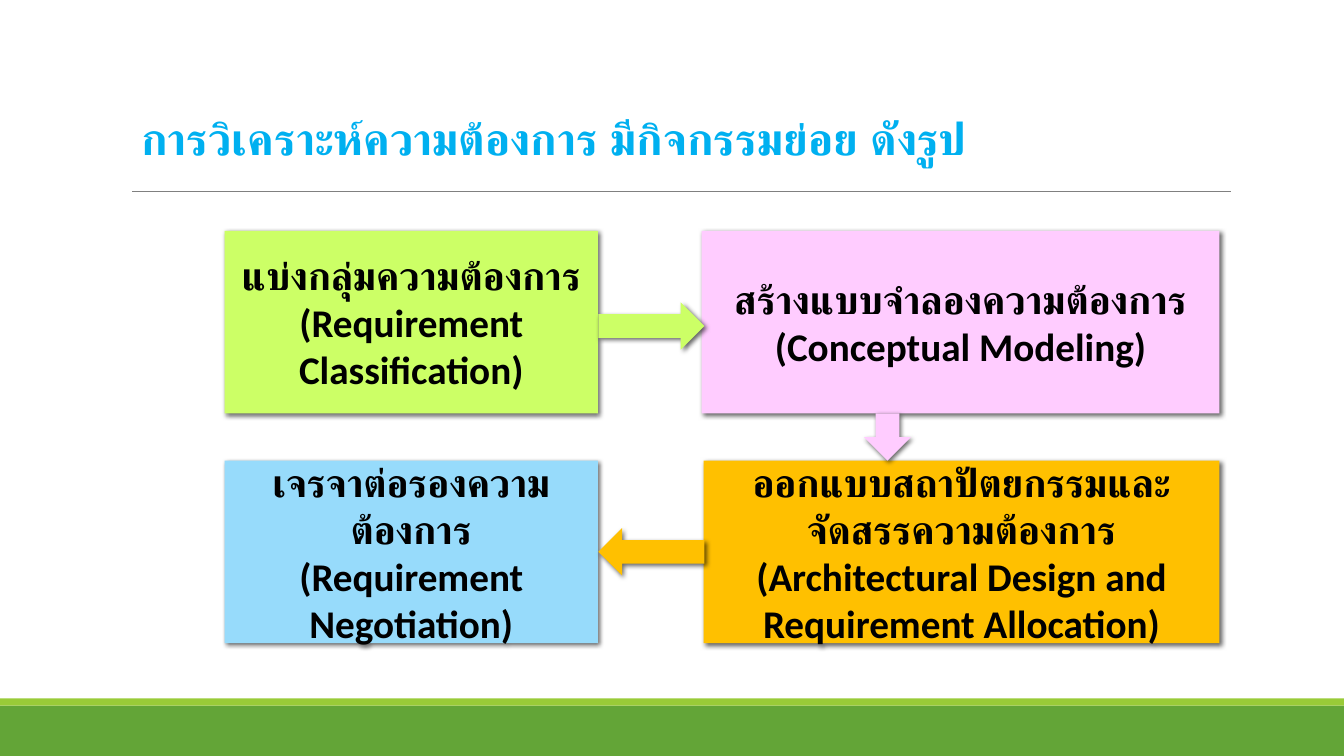
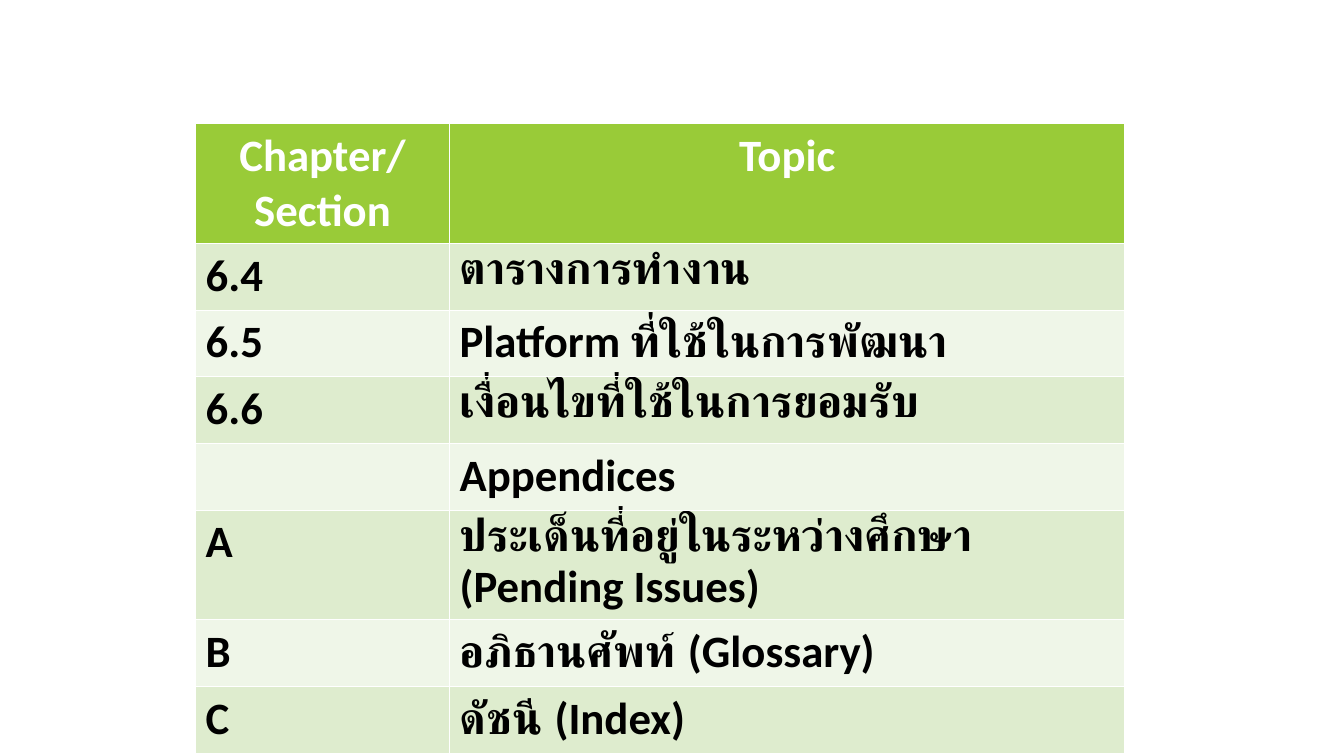
from dataclasses import dataclass

from lxml.etree import SubElement
from pptx import Presentation
from pptx.dml.color import RGBColor
from pptx.enum.shapes import MSO_CONNECTOR, MSO_SHAPE
from pptx.enum.text import MSO_ANCHOR, MSO_AUTO_SIZE, PP_ALIGN
from pptx.oxml.ns import qn
from pptx.shapes.autoshape import Shape
from pptx.slide import Slide
from pptx.text.text import TextFrame
from pptx.util import Cm, Pt

FONT = "Calibri"
BLACK, WHITE, GREY = "000000", "FFFFFF", "808080"
GREEN, LIME, TITLE_BLUE = "63A537", "99CB38", "00B0F0"
YELLOW_GREEN, PINK, ORANGE, SKY = "CCFF66", "FFCCFF", "FFC000", "97DBFB"
ROW_FILLS = ("EFF6E8", "DEECCE")

SLIDE_WIDTH, SLIDE_HEIGHT = 33.87, 19.05
TOP_ROW, BOTTOM_ROW, ACTIVITY_HEIGHT = 5.82, 11.61, 4.6
ARROW_LEFT, ARROW_LENGTH, ARROW_THICKNESS = 15.08, 2.67, 1.19


@dataclass(frozen=True)
class Activity:
    """A step of the analysis, with lengths in centimetres."""
    left: float
    top: float
    width: float
    color: str
    thai: str
    english: str


@dataclass(frozen=True)
class Arrow:
    """A block arrow between two activities, with lengths in centimetres."""
    left: float
    top: float
    length: float
    rotation: int
    color: str


ACTIVITIES = (
    Activity(5.66, TOP_ROW, 9.41, YELLOW_GREEN,
             "แบ่งกลุ่มความต้องการ", "(Requirement Classification)"),
    Activity(17.68, TOP_ROW, 13.05, PINK,
             "สร้างแบบจำลองความต้องการ", "(Conceptual Modeling)"),
    Activity(17.73, BOTTOM_ROW, 13, ORANGE,
             "ออกแบบสถาปัตยกรรมและจัดสรรความต้องการ",
             "(Architectural Design and Requirement Allocation)"),
    Activity(5.66, BOTTOM_ROW, 9.41, SKY,
             "เจรจาต่อรองความต้องการ", "(Requirement Negotiation)"),
)

ARROWS = (
    Arrow(ARROW_LEFT, 7.62, ARROW_LENGTH, 0, YELLOW_GREEN),
    Arrow(21.77, TOP_ROW + ACTIVITY_HEIGHT, ARROW_THICKNESS, 90, PINK),
    Arrow(ARROW_LEFT, 13.31, ARROW_LENGTH, 180, ORANGE),
)

TOPICS = (
    ("Chapter/Section", "Topic"),
    ("6.4", "ตารางการทำงาน"),
    ("6.5", "Platform ที่ใช้ในการพัฒนา"),
    ("6.6", "เงื่อนไขที่ใช้ในการยอมรับ"),
    ("", "Appendices"),
    ("A", "ประเด็นที่อยู่ในระหว่างศึกษา (Pending Issues)"),
    ("B", "อภิธานศัพท์ (Glossary)"),
    ("C", "ดัชนี (Index)"),
)


def rgb(color: str) -> RGBColor:
    """Turn a hex string into a colour."""
    return RGBColor.from_string(color)


def write(frame: TextFrame, *lines: str, size: int, color: str = BLACK,
          align: PP_ALIGN = PP_ALIGN.LEFT) -> None:
    """Write each line as a bold paragraph."""
    frame.word_wrap = True
    for index, line in enumerate(lines):
        paragraph = frame.add_paragraph() if index else frame.paragraphs[0]
        paragraph.alignment = align
        run = paragraph.add_run()
        run.text = line
        run.font.name = FONT
        run.font.size = Pt(size)
        run.font.bold = True
        run.font.color.rgb = rgb(color)


def add_block(slide: Slide, left: float, top: float, width: float, height: float,
              color: str, preset: MSO_SHAPE = MSO_SHAPE.RECTANGLE) -> Shape:
    """Add a filled shape without outline or shadow."""
    block = slide.shapes.add_shape(preset, Cm(left), Cm(top), Cm(width), Cm(height))
    block.fill.solid()
    block.fill.fore_color.rgb = rgb(color)
    block.line.fill.background()
    block.shadow.inherit = False
    return block


def cast_shadow(block: Shape) -> None:
    """Give a block a soft shadow to the lower right."""
    effects = block.element.spPr.find(qn("a:effectLst"))
    shadow = SubElement(effects, qn("a:outerShdw"), blurRad=str(Pt(3.5)),
                        dist=str(Pt(2)), dir="2700000", algn="tl", rotWithShape="0")
    tint = SubElement(shadow, qn("a:srgbClr"), val=BLACK)
    SubElement(tint, qn("a:alpha"), val="60000")


def add_frame(slide: Slide, title: str) -> None:
    """Add the footer bands, the title and the rule below it."""
    add_block(slide, 0, 17.78, SLIDE_WIDTH, 1.27, GREEN)
    add_block(slide, 0, 17.6, SLIDE_WIDTH, 0.18, LIME)
    rule = slide.shapes.add_connector(
        MSO_CONNECTOR.STRAIGHT, Cm(3.33), Cm(4.83), Cm(31.01), Cm(4.83))
    rule.line.color.rgb = rgb(GREY)
    rule.line.width = Pt(0.5)
    SubElement(rule.element.spPr, qn("a:effectLst"))

    heading = slide.shapes.title
    heading.left, heading.top, heading.width, heading.height = (
        Cm(3.56), Cm(2.82), Cm(23.04), Cm(1.9))
    frame = heading.text_frame
    frame.auto_size = MSO_AUTO_SIZE.NONE
    frame.vertical_anchor = MSO_ANCHOR.TOP
    frame.margin_left = frame.margin_right = 0
    write(frame, title, size=32, color=TITLE_BLUE)
    paragraph = frame.paragraphs[0]
    paragraph.line_spacing = 0.9
    paragraph.space_before, paragraph.space_after = Pt(12), Pt(2)


def add_activity(slide: Slide, activity: Activity) -> None:
    """Add the box of one activity."""
    box = add_block(slide, activity.left, activity.top, activity.width,
                    ACTIVITY_HEIGHT, activity.color)
    cast_shadow(box)
    box.text_frame.vertical_anchor = MSO_ANCHOR.MIDDLE
    write(box.text_frame, activity.thai, activity.english, size=28,
          align=PP_ALIGN.CENTER)


def add_arrow(slide: Slide, arrow: Arrow) -> None:
    """Add one block arrow."""
    pointer = add_block(slide, arrow.left, arrow.top, arrow.length,
                        ARROW_THICKNESS, arrow.color, MSO_SHAPE.RIGHT_ARROW)
    pointer.rotation = arrow.rotation
    cast_shadow(pointer)


def add_topics(slide: Slide) -> None:
    """Add the table of chapters and topics."""
    row_height = Cm(1.68)
    table = slide.shapes.add_table(
        len(TOPICS), 2, Cm(4.93), Cm(3.12), Cm(23.42), row_height * len(TOPICS)).table
    table.columns[0].width, table.columns[1].width = Cm(6.4), Cm(17.02)
    for row, texts in enumerate(TOPICS):
        table.rows[row].height = row_height
        for column, text in enumerate(texts):
            cell = table.cell(row, column)
            cell.fill.solid()
            cell.fill.fore_color.rgb = rgb(ROW_FILLS[row % 2] if row else LIME)
            if text:
                write(cell.text_frame, text, size=32,
                      color=BLACK if row else WHITE,
                      align=PP_ALIGN.LEFT if row else PP_ALIGN.CENTER)


def main() -> None:
    """Build and save the presentation."""
    deck = Presentation()
    deck.slide_width, deck.slide_height = Cm(SLIDE_WIDTH), Cm(SLIDE_HEIGHT)
    title_only, blank = deck.slide_layouts[5], deck.slide_layouts[6]

    analysis = deck.slides.add_slide(title_only)
    add_frame(analysis, "การวิเคราะห์ความต้องการ มีกิจกรรมย่อย ดังรูป")
    for activity in ACTIVITIES:
        add_activity(analysis, activity)
    for arrow in ARROWS:
        add_arrow(analysis, arrow)

    add_topics(deck.slides.add_slide(blank))
    deck.save("out.pptx")


if __name__ == "__main__":
    main()
